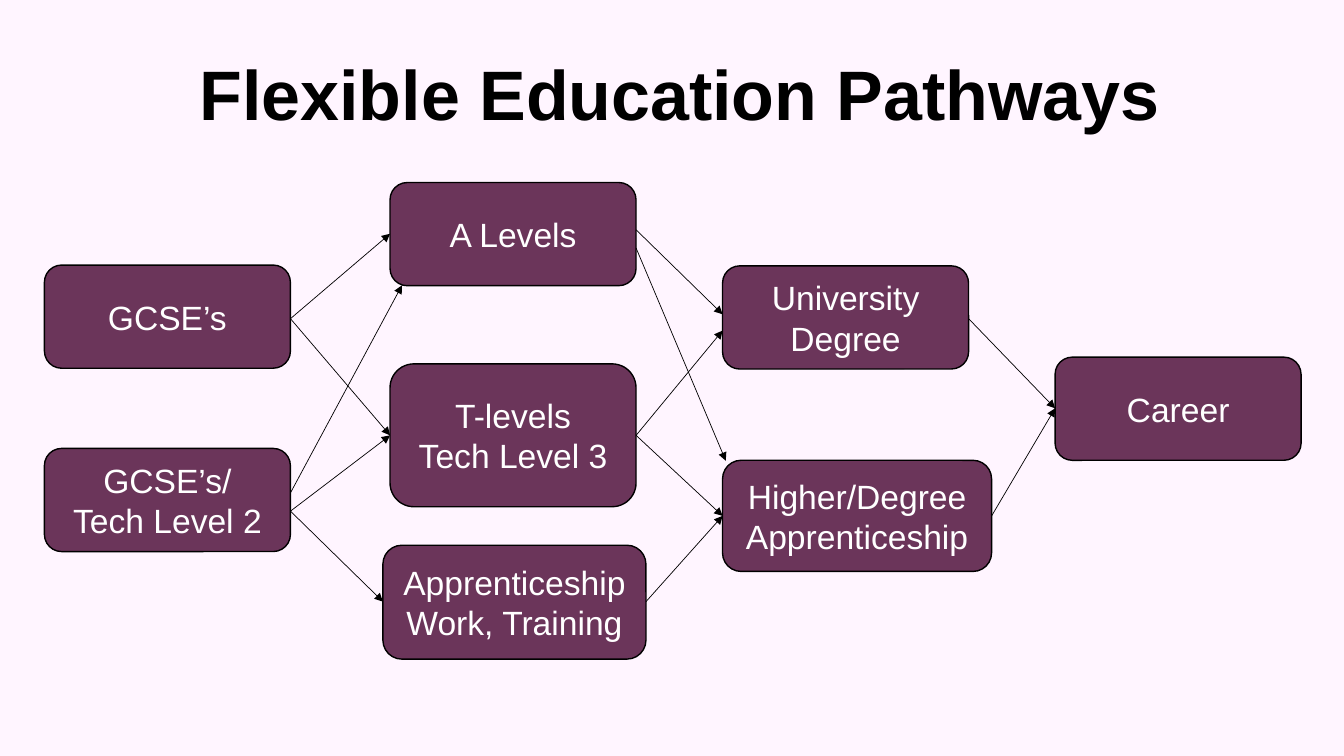
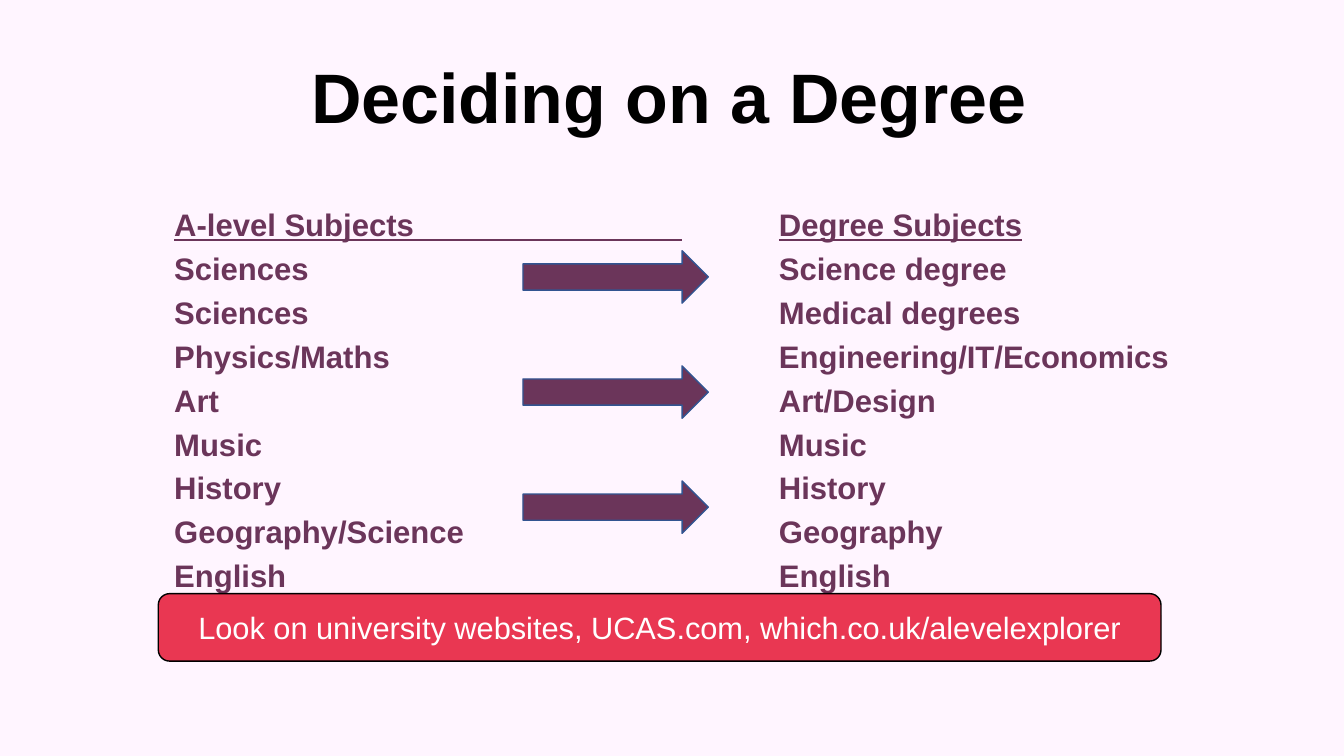
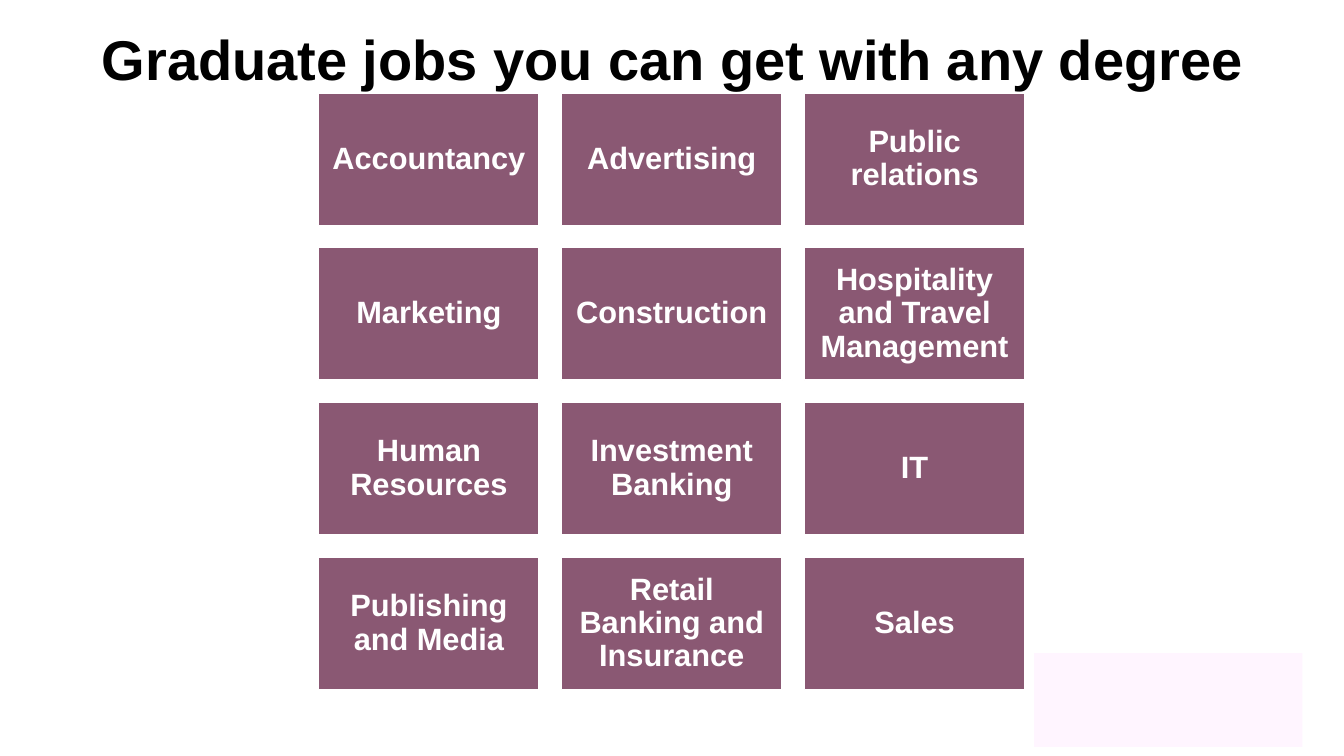
import pptx
import pptx.dml.color
import pptx.enum.shapes
import pptx.enum.text
import pptx.oxml
import pptx.oxml.ns
import pptx.util
from pptx.util import Cm

SHAPES = pptx.enum.shapes.MSO_SHAPE
ALIGN = pptx.enum.text.PP_ALIGN
ANCHOR = pptx.enum.text.MSO_ANCHOR


def color(value):
    return pptx.dml.color.RGBColor.from_string(value)


def add_xml(parent, tag, **attributes):
    element = parent.makeelement(pptx.oxml.ns.qn(tag), attributes)
    parent.append(element)
    return element


class Deck:
    FONT = "Arial"
    PLUM = "6B355A"
    MAUVE = "8A5873"
    RED = "E93752"
    BLUE = "325491"
    PALE = "FFF5FF"
    WHITE = "FFFFFF"
    BLACK = "000000"

    def __init__(self):
        self.presentation = pptx.Presentation()
        self.presentation.slide_width = Cm(33.87)
        self.presentation.slide_height = Cm(19.05)
        self.slide = None

    def new_slide(self, background):
        self.slide = self.presentation.slides.add_slide(self.presentation.slide_layouts[6])
        fill = self.slide.background.fill
        fill.solid()
        fill.fore_color.rgb = color(background)

    def style(self, paragraph, size, text_color, bold=False, spacing=None):
        if spacing:
            paragraph.line_spacing = spacing
        font = paragraph.font
        font.name = self.FONT
        font.size = pptx.util.Pt(size)
        font.bold = bold
        font.color.rgb = color(text_color)

    def text_box(self, left, top, width, height):
        frame = self.slide.shapes.add_textbox(Cm(left), Cm(top), Cm(width), Cm(height)).text_frame
        frame.word_wrap = True
        return frame

    def title(self, text, left, top, width, size=50):
        paragraph = self.text_box(left, top, width, 3.68).paragraphs[0]
        paragraph.text = text
        paragraph.alignment = ALIGN.CENTER
        self.style(paragraph, size, self.BLACK, True, 0.9)

    def shape(self, kind, left, top, width, height, fill, line=None):
        shape = self.slide.shapes.add_shape(kind, Cm(left), Cm(top), Cm(width), Cm(height))
        shape.shadow.inherit = False
        shape.fill.solid()
        shape.fill.fore_color.rgb = color(fill)
        if line:
            shape.line.color.rgb = color(line)
            shape.line.width = pptx.util.Pt(1)
        else:
            shape.line.fill.background()
        return shape

    def label(self, shape, text, size, bold=False, spacing=None):
        frame = shape.text_frame
        frame.word_wrap = True
        frame.vertical_anchor = ANCHOR.MIDDLE
        frame.text = text
        for paragraph in frame.paragraphs:
            paragraph.alignment = ALIGN.CENTER
            self.style(paragraph, size, self.WHITE, bold, spacing)

    def box(self, text, left, top, width=6.2, height=2.6, fill=PLUM, size=24):
        shape = self.shape(SHAPES.ROUNDED_RECTANGLE, left, top, width, height, fill, self.BLACK)
        self.label(shape, text, size)

    def tile(self, text, left, top, width, height):
        shape = self.shape(SHAPES.RECTANGLE, left, top, width, height, self.MAUVE, self.WHITE)
        frame = shape.text_frame
        frame.margin_left = frame.margin_right = frame.margin_top = frame.margin_bottom = Cm(0.23)
        self.label(shape, text, 22, True, 0.9)

    def line(self, start, end, line_color, width, arrow=False):
        connector = self.slide.shapes.add_connector(
            pptx.enum.shapes.MSO_CONNECTOR.STRAIGHT, *(Cm(value) for value in (*start, *end)))
        connector.line.color.rgb = color(line_color)
        connector.line.width = pptx.util.Pt(width)
        if arrow:
            add_xml(connector.line._get_or_add_ln(), "a:tailEnd", type="triangle")
        add_xml(connector._element.spPr, "a:effectLst")

    def columns(self, rows, left, top, width, height, tab):
        frame = self.text_box(left, top, width, height)
        frame.text = "\n".join("\t".join(row) for row in rows)
        for index, paragraph in enumerate(frame.paragraphs):
            if index:
                paragraph.space_before = pptx.util.Pt(10)
            paragraph.line_spacing = 0.8
            tabs = add_xml(paragraph._p.get_or_add_pPr(), "a:tabLst")
            add_xml(tabs, "a:tab", pos=str(Cm(tab)), algn="l")
            self.style(paragraph, 22.2, self.PLUM, True)
            paragraph.font.underline = index == 0


def pathways_slide(deck):
    deck.new_slide(deck.PALE)
    deck.title("Flexible Education Pathways", 2.54, 1.4, 29.21)
    deck.box("GCSE’s", 1.12, 6.68)
    deck.box("GCSE’s/\nTech Level 2", 1.12, 11.3)
    deck.box("A Levels", 9.83, 4.6)
    deck.box("T-levels\nTech Level 3", 9.83, 9.17, height=3.6)
    deck.box("Apprenticeship Work, Training", 9.65, 13.74, 6.63, 2.87)
    deck.box("University Degree", 18.21, 6.7)
    deck.box("Career", 26.59, 9)
    deck.box("Higher/Degree Apprenticeship", 18.21, 11.6, 6.78, 2.8)

    gcse_out, level_2_out = (7.32, 8.03), (7.32, 12.88)
    level_3_in, level_3_out = (9.83, 10.97), (16.03, 10.97)
    higher_in, career_in = (18.21, 13), (26.59, 10.29)
    arrows = [
        (gcse_out, (9.83, 5.89)),
        (gcse_out, level_3_in),
        (level_2_out, level_3_in),
        ((7.32, 12.42), (10.13, 7.19)),
        (level_2_out, (9.65, 15.16)),
        ((16.03, 5.79), (18.21, 7.92)),
        ((16.03, 6.25), (18.29, 11.61)),
        (level_3_out, (18.21, 8.33)),
        (level_3_out, higher_in),
        ((16.28, 15.16), higher_in),
        ((24.41, 8.03), career_in),
        ((24.99, 13), career_in),
    ]
    for start, end in arrows:
        deck.line(start, end, deck.BLACK, 0.5, arrow=True)


def degree_slide(deck):
    deck.new_slide(deck.PALE)
    subjects = [
        ("A-level Subjects", "Degree Subjects"),
        ("Sciences", "Science degree"),
        ("Sciences", "Medical degrees"),
        ("Physics/Maths", "Engineering/IT/Economics"),
        ("Art", "Art/Design"),
        ("Music", "Music"),
        ("History", "History"),
        ("Geography/Science", "Geography"),
        ("English", "English"),
    ]
    deck.columns(subjects, 4.14, 5.24, 27.33, 10, 15.24)
    deck.line((10.43, 6.05), (17.19, 6.05), deck.PLUM, 1.5)
    deck.title("Deciding on a Degree", 2.26, 1.47, 29.21)
    for row in range(3):
        deck.shape(SHAPES.RIGHT_ARROW, 13.18, 6.32 + 2.9 * row, 4.67, 1.32, deck.PLUM, deck.BLUE)
    deck.box("Look on university websites, UCAS.com, which.co.uk/alevelexplorer",
             3.99, 14.96, 25.27, 1.7, deck.RED, 22)


def jobs_slide(deck):
    deck.new_slide(deck.WHITE)
    deck.title("Graduate jobs you can get with any degree", 1.75, 0.69, 30.38, 40)
    jobs = [
        "Accountancy", "Advertising", "Public relations",
        "Marketing", "Construction", "Hospitality and Travel Management",
        "Human Resources", "Investment Banking", "IT",
        "Publishing and Media", "Retail Banking and Insurance", "Sales",
    ]
    width, height, gap = 5.56, 3.34, 0.56
    for index, job in enumerate(jobs):
        row, column = divmod(index, 3)
        deck.tile(job, 8.03 + column * (width + gap), 2.34 + row * (height + gap), width, height)
    deck.shape(SHAPES.RECTANGLE, 26.06, 16.46, 6.76, 2.36, deck.PALE)


def main():
    deck = Deck()
    pathways_slide(deck)
    degree_slide(deck)
    jobs_slide(deck)
    deck.presentation.save("out.pptx")


if __name__ == "__main__":
    main()
